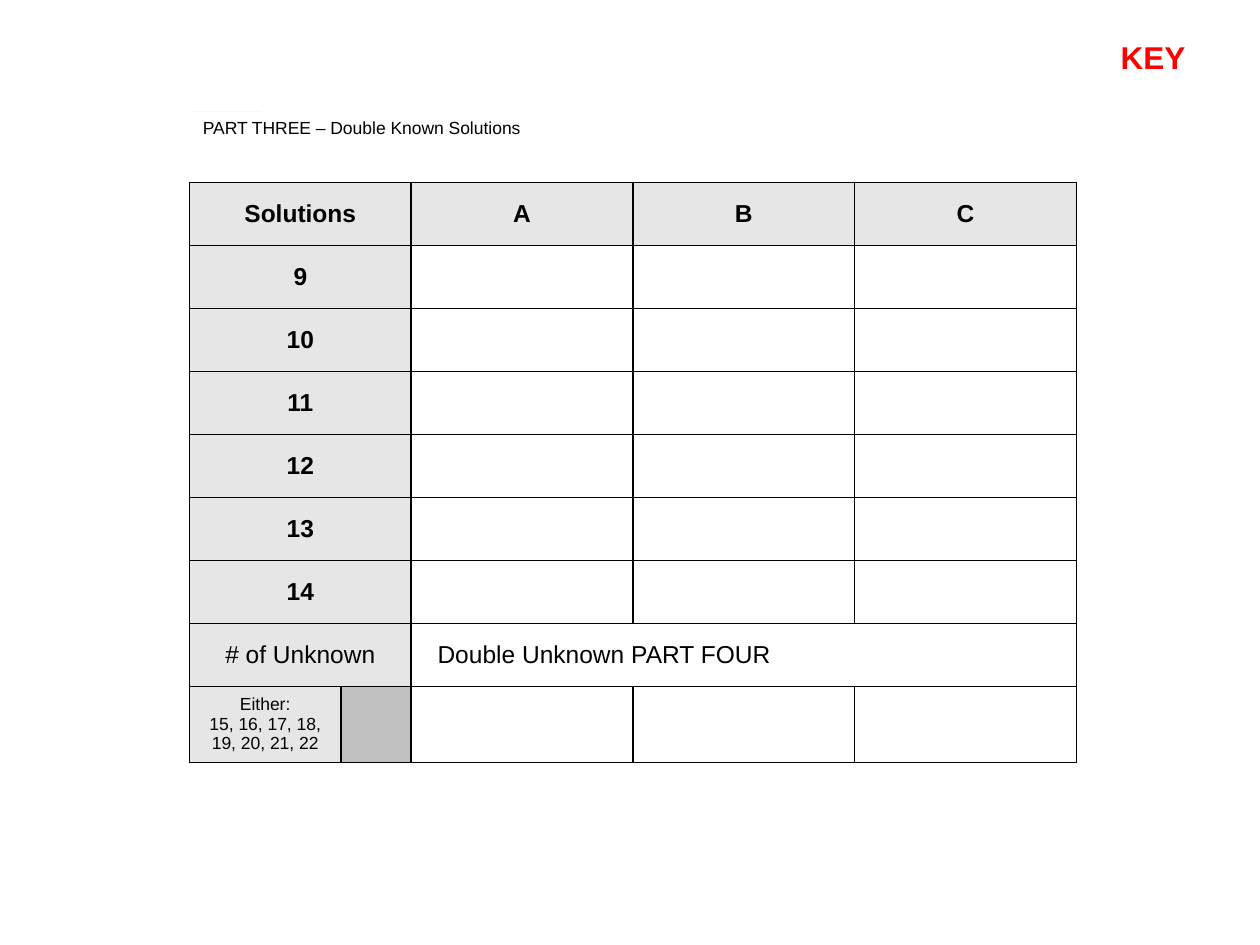
"""Build the answer-key slide for the double solutions table."""
from dataclasses import dataclass

from pptx import Presentation
from pptx.dml.color import RGBColor
from pptx.enum.shapes import MSO_SHAPE
from pptx.enum.text import MSO_ANCHOR, PP_ALIGN
from pptx.oxml.ns import qn
from pptx.util import Cm, Pt
from lxml import etree

LEFT, CENTER = PP_ALIGN.LEFT, PP_ALIGN.CENTER
MIDDLE = MSO_ANCHOR.MIDDLE
RECTANGLE = MSO_SHAPE.RECTANGLE


@dataclass(frozen=True)
class Theme:
    font: str = "Arial"
    ink: str = "000000"
    key: str = "FF0000"
    paper: str = "FFFFFF"
    label: str = "E6E6E6"
    shade: str = "C0C0C0"
    small: int = 10
    body: int = 14
    large: int = 18
    border: int = 1


class SlideBuilder:
    def __init__(self, page, theme):
        self.page = page
        self.theme = theme

    def set_lines(self, frame, lines, size, color, bold=False, align=LEFT):
        for index, line in enumerate(lines):
            para = frame.add_paragraph() if index else frame.paragraphs[0]
            para.text = line
            para.alignment = align
            para.font.name = self.theme.font
            para.font.size = Pt(size)
            para.font.bold = bold
            para.font.color.rgb = RGBColor.from_string(color)

    def text(self, left, top, width, height, line, size, color, bold=False, align=LEFT):
        box = self.page.shapes.add_textbox(Cm(left), Cm(top), Cm(width), Cm(height))
        box.text_frame.word_wrap = False
        self.set_lines(box.text_frame, [line], size, color, bold, align)

    def bar(self, left, top, width, height, color):
        shape = self.page.shapes.add_shape(RECTANGLE, Cm(left), Cm(top), Cm(width), Cm(height))
        shape.shadow.inherit = False
        shape.fill.solid()
        shape.fill.fore_color.rgb = RGBColor.from_string(color)
        shape.line.fill.background()

    def table(self, left, top, widths, heights):
        frame = self.page.shapes.add_table(
            len(heights), len(widths), Cm(left), Cm(top), Cm(sum(widths)), Cm(sum(heights)))
        table = frame.table
        table.first_row = table.horz_banding = False
        for column, width in zip(table.columns, widths):
            column.width = Cm(width)
        for row, height in zip(table.rows, heights):
            row.height = Cm(height)
            for cell in row.cells:
                self.border(cell)
                self.fill(cell, self.theme.paper)
        return table

    def border(self, cell):
        properties = cell._tc.get_or_add_tcPr()
        for side in ("a:lnL", "a:lnR", "a:lnT", "a:lnB"):
            line = etree.SubElement(properties, qn(side), w=str(Pt(self.theme.border)))
            solid = etree.SubElement(line, qn("a:solidFill"))
            etree.SubElement(solid, qn("a:srgbClr"), val=self.theme.ink)

    def fill(self, cell, color):
        cell.fill.solid()
        cell.fill.fore_color.rgb = RGBColor.from_string(color)

    def cell(self, cell, lines, color, size, bold=False, align=CENTER):
        self.fill(cell, color)
        cell.vertical_anchor = MIDDLE
        self.set_lines(cell.text_frame, lines, size, self.theme.ink, bold, align)


def main():
    deck = Presentation()
    deck.slide_width, deck.slide_height = Cm(25.4), Cm(19.05)
    theme = Theme()
    builder = SlideBuilder(deck.slides.add_slide(deck.slide_layouts[6]), theme)

    builder.text(3.84, 2.24, 6.96, 1.45, "PART THREE – Double Known Solutions",
                 theme.small, theme.ink)
    builder.bar(3.84, 2.24, 1.42, 0, theme.shade)

    table = builder.table(3.82, 3.68, [3.05, 1.42] + [4.47] * 3, [1.27] * 8 + [1.52])
    labels = ["Solutions", *map(str, range(9, 15)), "# of Unknown"]
    for row, label in enumerate(labels):
        table.cell(row, 0).merge(table.cell(row, 1))
        builder.cell(table.cell(row, 0), [label], theme.label, theme.body,
                     bold=label != labels[-1])
    for column, letter in enumerate("ABC", start=2):
        builder.cell(table.cell(0, column), [letter], theme.label, theme.body, bold=True)

    part_four = table.cell(7, 2)
    part_four.merge(table.cell(7, 4))
    part_four.margin_left = Cm(0.53)
    builder.cell(part_four, ["Double Unknown PART FOUR"], theme.paper, theme.body, align=LEFT)
    builder.cell(table.cell(8, 0), ["Either:", "15, 16, 17, 18, 19, 20, 21, 22"],
                 theme.label, theme.small)
    builder.fill(table.cell(8, 1), theme.shade)

    builder.text(22.33, 0.64, 1.83, 1.02, "KEY", theme.large, theme.key, bold=True, align=CENTER)
    deck.save("out.pptx")


if __name__ == "__main__":
    main()
